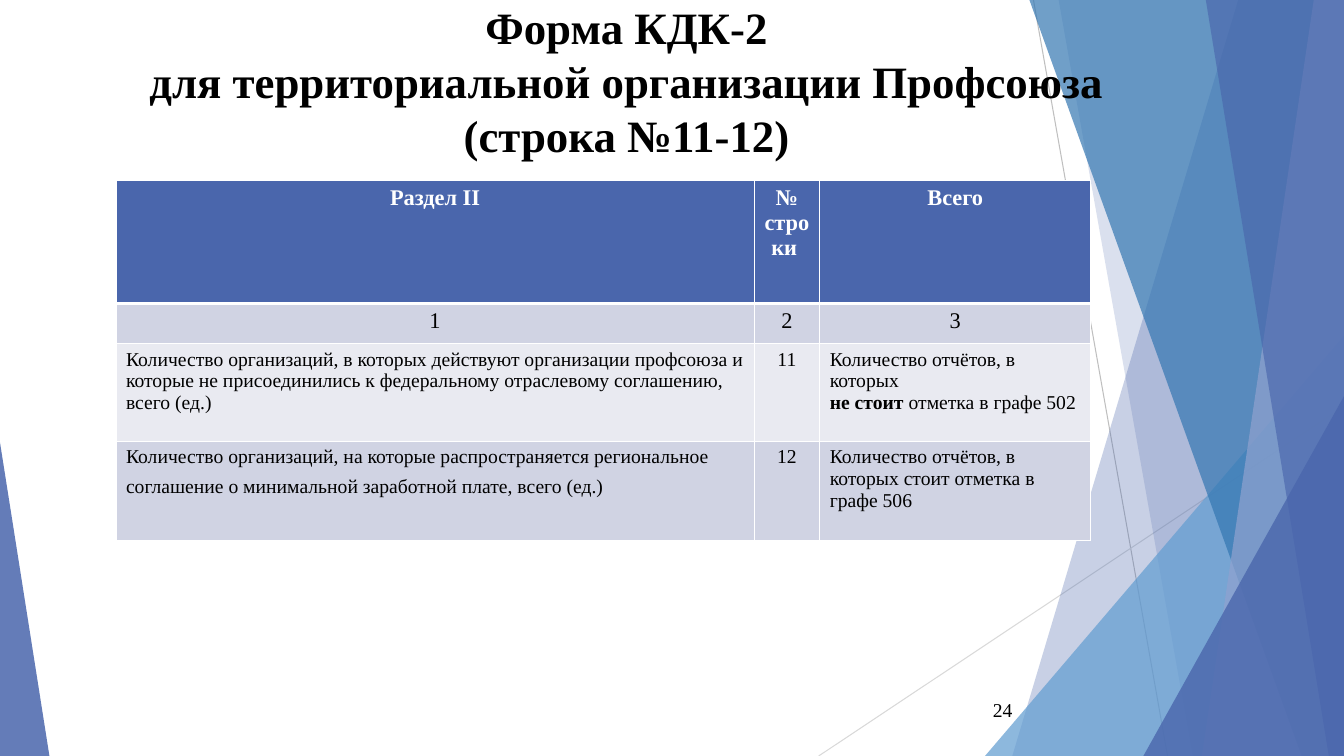
from lxml import etree
from pptx import Presentation
from pptx.dml.color import RGBColor
from pptx.enum.shapes import MSO_CONNECTOR, MSO_SHAPE
from pptx.enum.text import MSO_ANCHOR, MSO_AUTO_SIZE, PP_ALIGN
from pptx.oxml.ns import qn
from pptx.util import Inches, Pt

TRIANGLE = MSO_SHAPE.ISOSCELES_TRIANGLE
STRAIGHT = MSO_CONNECTOR.STRAIGHT
LEFT, CENTER, RIGHT = PP_ALIGN.LEFT, PP_ALIGN.CENTER, PP_ALIGN.RIGHT
MIDDLE = MSO_ANCHOR.MIDDLE
NO_AUTOFIT = MSO_AUTO_SIZE.NONE

BLACK = RGBColor(0x00, 0x00, 0x00)
WHITE = RGBColor(0xFF, 0xFF, 0xFF)
INDIGO = RGBColor(0x4A, 0x66, 0xAC)
LAVENDER = RGBColor(0x90, 0xA2, 0xCF)
SKY = RGBColor(0x62, 0x9D, 0xD1)
STEEL = RGBColor(0x34, 0x77, 0xB2)
GREY = RGBColor(0xBF, 0xBF, 0xBF)
LIGHT_GREY = RGBColor(0xD9, 0xD9, 0xD9)
BAND_DARK = RGBColor(0xD0, 0xD3, 0xE3)
BAND_LIGHT = RGBColor(0xE9, 0xEA, 0xF1)

FONT = "Times New Roman"
WIDTH, HEIGHT = 13.33, 7.5


def write(paragraph, text, size=14, bold=False, color=BLACK, font=FONT, align=LEFT):
    """Add text to a paragraph; a newline becomes a line break."""
    paragraph.alignment = align
    for index, line in enumerate(text.split("\n")):
        if index:
            paragraph.add_line_break()
        run = paragraph.add_run()
        run.text = line
        run.font.name, run.font.size = font, Pt(size)
        run.font.bold = bold
        run.font.color.rgb = color


class SlideBuilder:
    """Holds the current slide and draws each kind of element on it."""

    def __init__(self, slide):
        self.slide = slide
        self.shapes = slide.shapes

    def paint(self, shape, color, opacity):
        shape.shadow.inherit = False
        shape.line.fill.background()
        shape.fill.solid()
        shape.fill.fore_color.rgb = color
        tint = shape.fill._xPr.find(".//" + qn("a:srgbClr"))
        etree.SubElement(tint, qn("a:alpha"), val=str(opacity * 1000))

    def line(self, start, end, color):
        points = [Inches(value) for value in (*start, *end)]
        connector = self.shapes.add_connector(STRAIGHT, *points)
        connector.line.color.rgb = color
        connector.line.width = Pt(0.75)
        etree.SubElement(connector._element.spPr, qn("a:effectLst"))

    def facet(self, top_x, bottom_x, color, opacity):
        """Full-height panel from a slanted left edge to the right slide edge."""
        corners = [(WIDTH, 0), (WIDTH, HEIGHT), (bottom_x, HEIGHT)]
        builder = self.shapes.build_freeform(Inches(top_x), 0)
        builder.add_line_segments([(Inches(x), Inches(y)) for x, y in corners])
        self.paint(builder.convert_to_shape(), color, opacity)

    def triangle(self, left, top, width, apex, color, opacity):
        """Triangle that stands on the bottom slide edge."""
        shape = self.shapes.add_shape(
            TRIANGLE, Inches(left), Inches(top), Inches(width), Inches(HEIGHT - top))
        shape.adjustments[0] = apex
        self.paint(shape, color, opacity)

    def title(self, text):
        title = self.shapes.title
        title.left, title.top = Inches(0.96), Inches(0.21)
        title.width, title.height = Inches(10.51), Inches(1.38)
        frame = title.text_frame
        frame.word_wrap, frame.auto_size = True, NO_AUTOFIT
        frame.vertical_anchor = MIDDLE
        frame.margin_top, frame.margin_bottom = Inches(0.05), Inches(0.25)
        paragraph = frame.paragraphs[0]
        paragraph.line_spacing = 1.0
        write(paragraph, text, size=32, bold=True, align=CENTER)
        # Bring the title in front of the decoration
        title._element.getparent().append(title._element)

    def page_number(self, text):
        box = self.shapes.add_textbox(Inches(9.39), Inches(6.9), Inches(0.75), Inches(0.29))
        box.text_frame.word_wrap = True
        box.text_frame.vertical_anchor = MIDDLE
        write(box.text_frame.paragraphs[0], text, align=RIGHT)

    def border(self, cell, **widths):
        properties = cell._tc.get_or_add_tcPr()
        for side in "LRTB":
            line = etree.SubElement(
                properties, qn("a:ln" + side), w=str(Pt(widths.get(side, 1))))
            fill = etree.SubElement(line, qn("a:solidFill"))
            etree.SubElement(fill, qn("a:srgbClr"), val=str(WHITE))

    def table(self, left, top, columns, heights, rows, fills):
        table = self.shapes.add_table(
            len(rows), len(columns), Inches(left), Inches(top),
            Inches(sum(columns)), Inches(sum(heights))).table
        for column, width in zip(table.columns, columns):
            column.width = Inches(width)
        for row_index, (row, height) in enumerate(zip(rows, heights)):
            table.rows[row_index].height = Inches(height)
            header = row_index == 0
            edges = {0: {"B": 3}, 1: {"T": 3}}.get(row_index, {})
            for column_index, paragraphs in enumerate(row):
                cell = table.cell(row_index, column_index)
                self.border(cell, **edges)
                cell.fill.solid()
                cell.fill.fore_color.rgb = fills[row_index]
                centered = row_index < 2 or column_index == 1
                style = {"size": 16 if row_index < 2 else 14, "bold": header,
                         "color": WHITE if header else BLACK,
                         "align": CENTER if centered else LEFT}
                frame = cell.text_frame
                for index, runs in enumerate(paragraphs):
                    paragraph = frame.add_paragraph() if index else frame.paragraphs[0]
                    for text, changes in runs:
                        write(paragraph, text, **{**style, **changes})


def plain(text):
    """Cell content with one paragraph in the style of its row."""
    return [[(text, {})]]


ROWS = [
    [plain("Раздел II"), plain("№ строки "), plain("Всего")],
    [plain("1"), plain("2"), plain("3")],
    [plain("Количество организаций, в которых действуют организации профсоюза и "
           "которые не присоединились к федеральному отраслевому соглашению, всего (ед.)"),
     plain("11"),
     [[("Количество отчётов, в которых", {})],
      [("не стоит ", {"bold": True}), ("отметка в графе 502", {})]]],
    [[[("Количество организаций, на которые распространяется региональное "
        "соглашение о минимальной заработной плате, всего (ед.) ", {}),
       ("\t", {"size": 18, "font": "Lato"})]],
     plain("12"),
     plain("Количество отчётов, в которых стоит отметка в графе 506")],
]


def main():
    presentation = Presentation()
    presentation.slide_width, presentation.slide_height = Inches(WIDTH), Inches(HEIGHT)
    title_only = presentation.slide_layouts[5]
    builder = SlideBuilder(presentation.slides.add_slide(title_only))

    # Background decoration, back to front
    builder.line((10.25, 0), (11.58, HEIGHT), GREY)
    builder.line((WIDTH, 4.03), (8.12, HEIGHT), LIGHT_GREY)
    builder.facet(12.28, 10.04, INDIGO, 30)
    builder.facet(10.5, 11.83, INDIGO, 20)
    builder.triangle(9.77, 3.33, 3.56, 1, SKY, 72)
    builder.facet(10.21, 12.91, STEEL, 70)
    builder.facet(13.03, 11.92, LAVENDER, 70)
    builder.facet(11.96, 13.18, INDIGO, 65)
    builder.triangle(11.34, 3.93, 1.99, 1, INDIGO, 80)
    builder.triangle(0, 4.39, 0.49, 0, INDIGO, 85)

    # Title and page number
    builder.title("Форма КДК-2\nдля территориальной организации Профсоюза (строка №11-12)")
    builder.page_number("24")

    # Table of the form's lines
    builder.table(1.15, 1.79, columns=[6.33, 0.65, 2.69], heights=[1.22, 0.4, 0.97, 0.98],
                  rows=ROWS, fills=[INDIGO, BAND_DARK, BAND_LIGHT, BAND_DARK])

    presentation.save("out.pptx")


if __name__ == "__main__":
    main()
